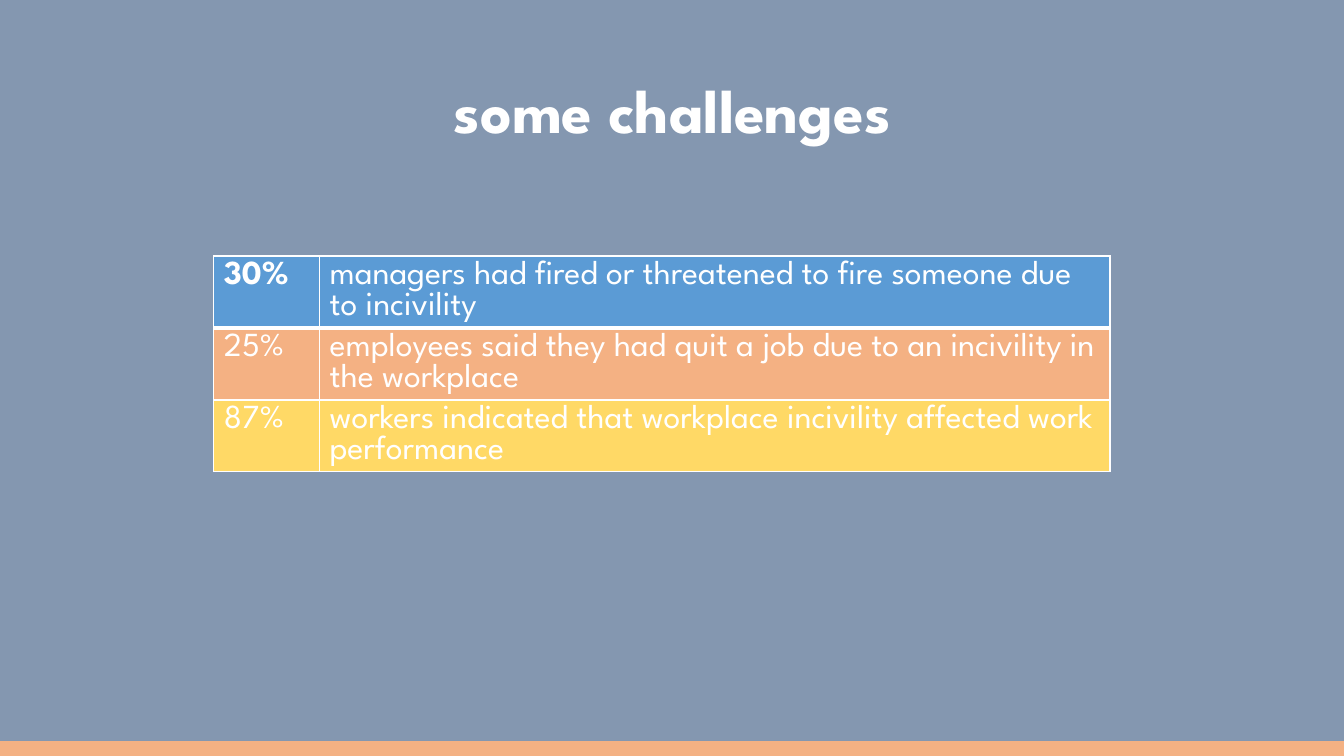
import dataclasses

import lxml.etree
import pptx
import pptx.dml.color
import pptx.enum.shapes
import pptx.enum.text
import pptx.oxml.ns
import pptx.util


@dataclasses.dataclass(frozen=True)
class Theme:
    font: str = "League Spartan"
    background: str = "8497B0"
    text: str = "FFFFFF"
    rule: str = "FFFFFF"
    accent: str = "F4B183"
    rows: tuple = ("5B9BD5", "F4B183", "FFD966")
    title_size: int = 44
    body_size: int = 24
    thin: int = 1
    thick: int = 3


THEME = Theme()
WIDTH = pptx.util.Inches(13.33)
HEIGHT = pptx.util.Inches(7.5)
CHALLENGES = [
    ("30%", "managers had fired or threatened to fire someone due to incivility"),
    ("25%", "employees said they had quit a job due to an incivility in the workplace"),
    ("87%", "workers indicated that workplace incivility affected work performance"),
]


def rgb(value):
    return pptx.dml.color.RGBColor.from_string(value)


def inch_box(left, top, width, height):
    return [pptx.util.Inches(v) for v in (left, top, width, height)]


def paint(fill, color):
    fill.solid()
    fill.fore_color.rgb = rgb(color)


def format_text(tf, size, bold):
    for p in tf.paragraphs:
        for r in p.runs:
            r.font.name = THEME.font
            r.font.size = pptx.util.Pt(size)
            r.font.bold = bold
            r.font.color.rgb = rgb(THEME.text)


def add_borders(cell, top, bottom):
    qn = pptx.oxml.ns.qn
    tc_pr = cell._tc.get_or_add_tcPr()
    widths = {"lnL": THEME.thin, "lnR": THEME.thin, "lnT": top, "lnB": bottom}
    for side, width in widths.items():
        ln = lxml.etree.SubElement(tc_pr, qn(f"a:{side}"), w=str(pptx.util.Pt(width)))
        fill = lxml.etree.SubElement(ln, qn("a:solidFill"))
        lxml.etree.SubElement(fill, qn("a:srgbClr"), val=THEME.rule)


def add_title(s, box, text):
    title = s.shapes.title
    title.left, title.top, title.width, title.height = box
    tf = title.text_frame
    tf.text = text
    tf.vertical_anchor = pptx.enum.text.MSO_ANCHOR.MIDDLE
    p = tf.paragraphs[0]
    p.alignment = pptx.enum.text.PP_ALIGN.CENTER
    p.line_spacing = 0.9
    format_text(tf, THEME.title_size, True)


def add_challenges(s, box, challenges):
    table = s.shapes.add_table(len(challenges), 2, *box).table
    figure_width = round(box[2] * 0.118)
    table.columns[0].width = figure_width
    table.columns[1].width = box[2] - figure_width
    for i, (entry, color) in enumerate(zip(challenges, THEME.rows)):
        top = THEME.thick if i == 1 else THEME.thin
        bottom = THEME.thick if i == 0 else THEME.thin
        for j, text in enumerate(entry):
            cell = table.cell(i, j)
            add_borders(cell, top, bottom)
            paint(cell.fill, color)
            cell.text_frame.text = text
            format_text(cell.text_frame, THEME.body_size, i == 0 and j == 0)


def add_footer_band(s, box):
    band = s.shapes.add_shape(pptx.enum.shapes.MSO_SHAPE.RECTANGLE, *box)
    band.shadow.inherit = False
    paint(band.fill, THEME.accent)
    band.line.color.rgb = rgb(THEME.accent)
    band.line.width = pptx.util.Pt(THEME.thin)


def main():
    prs = pptx.Presentation()
    prs.slide_width = WIDTH
    prs.slide_height = HEIGHT
    s = prs.slides.add_slide(prs.slide_layouts[5])
    paint(s.background.fill, THEME.background)
    add_title(s, inch_box(0.92, 0.4, 11.5, 1.45), "some challenges")
    add_challenges(s, inch_box(2.12, 2.54, 8.89, 2.01), CHALLENGES)
    band_height = pptx.util.Inches(0.14)
    add_footer_band(s, (0, HEIGHT - band_height, WIDTH, band_height))
    prs.save("out.pptx")


if __name__ == "__main__":
    main()
